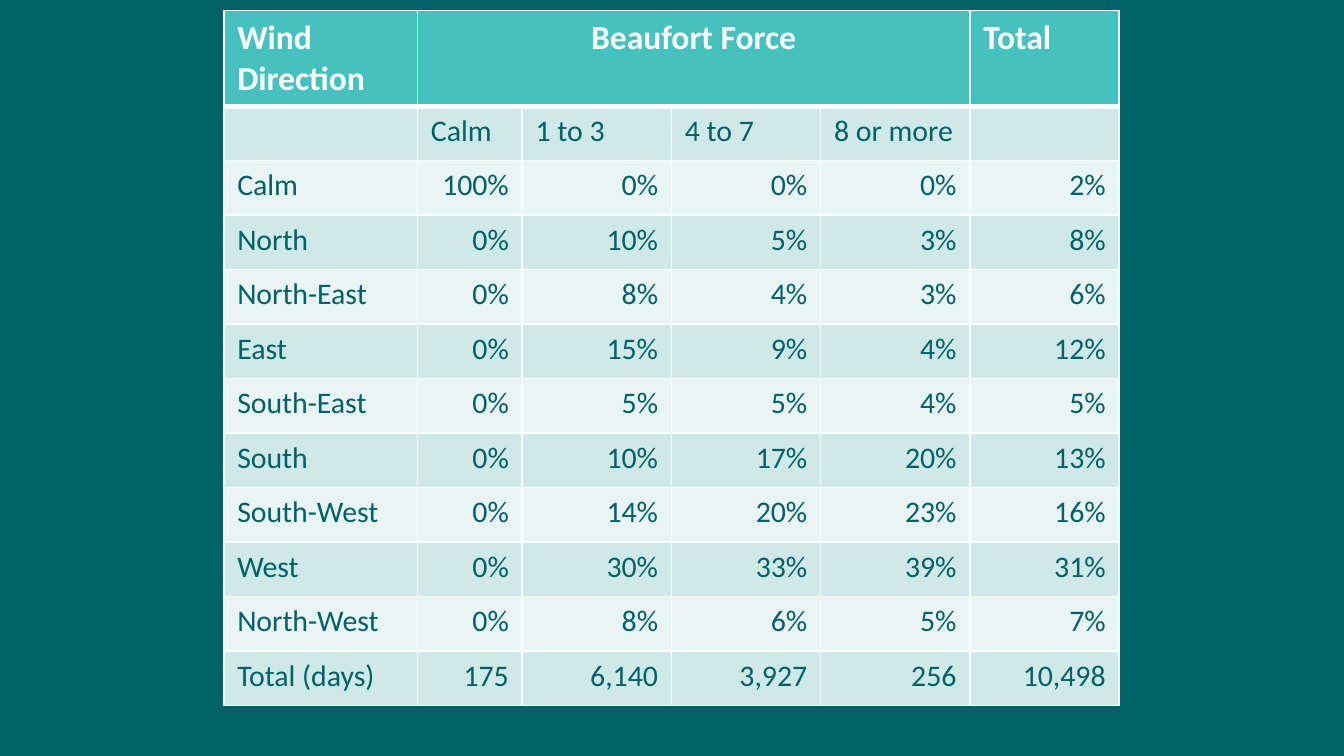
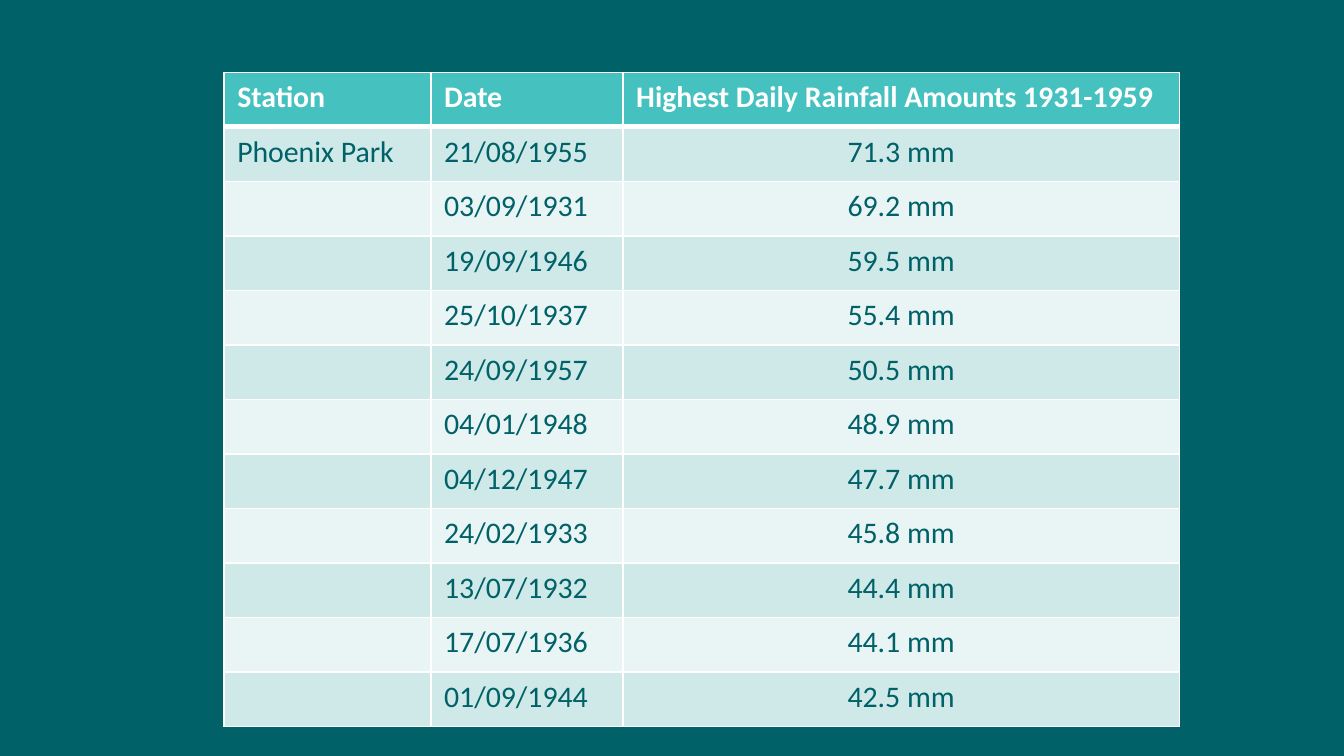
from lxml.etree import SubElement as Sub
from pptx import Presentation
from pptx.dml.color import RGBColor
from pptx.enum.text import PP_ALIGN as Align
from pptx.oxml.ns import qn
from pptx.util import Cm, Pt

# Shared look
DARK, TEAL, WHITE = "006168", "45C1C0", "FFFFFF"
BANDS = ["CFE9E8", "E9F4F4"]
FONT = "Calibri"
LEFT, ROW = 4.23, 1.03


def paint(color, code):
    color.rgb = RGBColor.from_string(code)


def edge(cell, side, width):
    props = cell._tc.get_or_add_tcPr()
    line = Sub(props, qn("a:ln" + side), w=str(Pt(width)))
    Sub(Sub(line, qn("a:solidFill")), qn("a:srgbClr"), val=WHITE)


# Wind table: text in left column, figures to the right
wind = [
    ["Wind Direction", "Beaufort Force", "", "", "", "Total"],
    ["", "Calm", "1 to 3", "4 to 7", "8 or more", ""],
    ["Calm", "100%", "0%", "0%", "0%", "2%"],
    ["North", "0%", "10%", "5%", "3%", "8%"],
    ["North-East", "0%", "8%", "4%", "3%", "6%"],
    ["East", "0%", "15%", "9%", "4%", "12%"],
    ["South-East", "0%", "5%", "5%", "4%", "5%"],
    ["South", "0%", "10%", "17%", "20%", "13%"],
    ["South-West", "0%", "14%", "20%", "23%", "16%"],
    ["West", "0%", "30%", "33%", "39%", "31%"],
    ["North-West", "0%", "8%", "6%", "5%", "7%"],
    ["Total (days)", "175", "6,140", "3,927", "256", "10,498"],
]

# Rainfall table: one station, wettest days first
rain = [["Station", "Date", "Highest Daily Rainfall Amounts 1931-1959"]]
days = [
    ("21/08/1955", 71.3), ("03/09/1931", 69.2), ("19/09/1946", 59.5),
    ("25/10/1937", 55.4), ("24/09/1957", 50.5), ("04/01/1948", 48.9),
    ("04/12/1947", 47.7), ("24/02/1933", 45.8), ("13/07/1932", 44.4),
    ("17/07/1936", 44.1), ("01/09/1944", 42.5),
]
for n, (day, depth) in enumerate(days):
    rain.append(["" if n else "Phoenix Park", day, f"{depth} mm"])

# Rows, column widths, top, height, header size,
# first row and column of aligned figures, their alignment
tables = [
    (wind, [3.66, 1.98] + [2.82] * 4, 0.2, 13.11, 18, 2, 1, Align.RIGHT),
    (rain, [3.91, 3.63, 10.52], 1.37, 12.36, 16, 1, 2, Align.CENTER),
]

prs = Presentation()
prs.slide_width, prs.slide_height = Cm(25.4), Cm(14.29)
back = prs.slide_master.background.fill
back.solid()
paint(back.fore_color, DARK)

for rows, widths, top, height, size, first, start, align in tables:
    slide = prs.slides.add_slide(prs.slide_layouts[6])
    frame = slide.shapes.add_table(len(rows), len(widths), Cm(LEFT), Cm(top),
                                   Cm(sum(widths)), Cm(height))
    grid = frame.table
    for col, width in zip(grid.columns, widths):
        col.width = Cm(width)
    for row in grid.rows:
        row.height = Cm(ROW)
    frame.height = Cm(height)

    for r, texts in enumerate(rows):
        for c, text in enumerate(texts):
            cell = grid.cell(r, c)
            head = r == 0

            # Borders, with a heavy rule under the header
            for side in "LRTB":
                rule = (head and side == "B") or (r == 1 and side == "T")
                edge(cell, side, 3 if rule else 1)
            cell.fill.solid()
            paint(cell.fill.fore_color, TEAL if head else BANDS[(r - 1) % 2])

            # Text
            if not text:
                continue
            para = cell.text_frame.paragraphs[0]
            if r >= first and c >= start:
                para.alignment = align
            run = para.add_run()
            run.text = text
            run.font.name = FONT
            run.font.size = Pt(size if head else 16)
            run.font.bold = head
            paint(run.font.color, WHITE if head else DARK)

    # Force heading spans its four columns
    if rows is wind:
        grid.cell(0, 1).merge(grid.cell(0, 4))
        grid.cell(0, 1).text_frame.paragraphs[0].alignment = Align.CENTER

prs.save("out.pptx")
